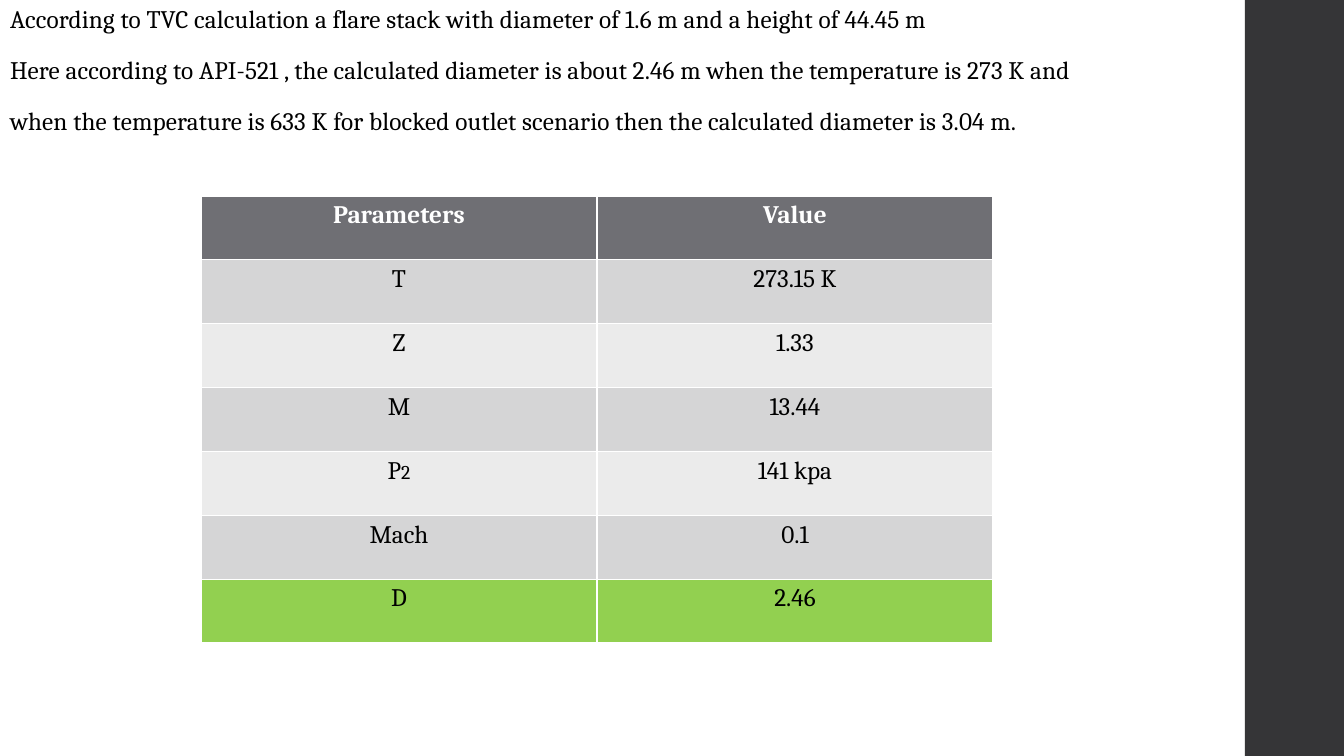
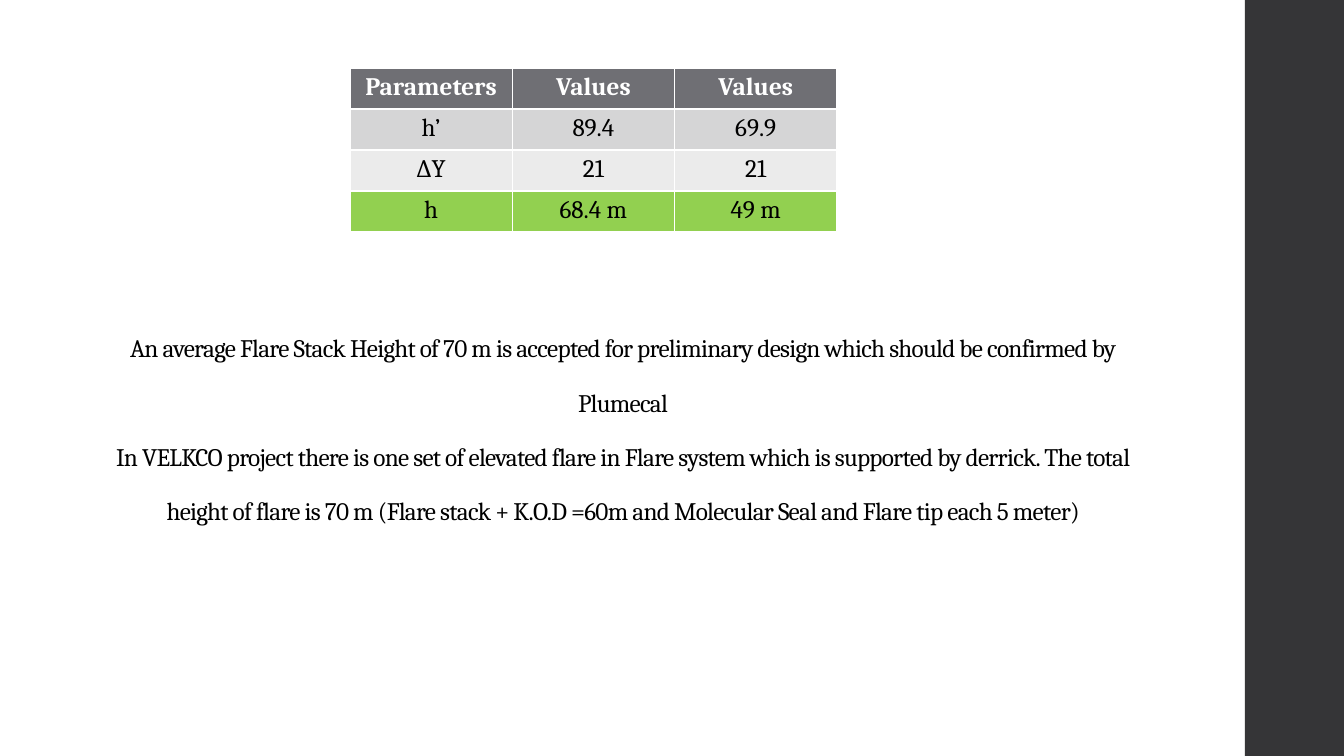
from dataclasses import dataclass

from lxml import etree
from pptx import Presentation
from pptx.dml.color import RGBColor
from pptx.enum.shapes import MSO_SHAPE
from pptx.enum.text import MSO_ANCHOR, MSO_AUTO_SIZE, PP_ALIGN
from pptx.oxml.ns import qn
from pptx.util import Emu, Pt

RECT = MSO_SHAPE.RECTANGLE
TOP, BOTTOM = MSO_ANCHOR.TOP, MSO_ANCHOR.BOTTOM
NO_AUTOFIT = MSO_AUTO_SIZE.NONE
LEFT, CENTER = PP_ALIGN.LEFT, PP_ALIGN.CENTER

EMU_PER_PX = 12192000 / 1344
SLIDE_W, SLIDE_H = 1344, 756
TITLE_AND_CONTENT, TITLE_ONLY = 1, 5


@dataclass(frozen=True)
class Theme:
    font: str = "Cambria"
    size: int = 18
    small: int = 14
    text: str = "000000"
    white: str = "FFFFFF"
    band: str = "353537"
    header: str = "6F6F74"
    odd_row: str = "D5D5D6"
    even_row: str = "EBEBEB"
    result: str = "92D050"


THEME = Theme()


@dataclass(frozen=True)
class Box:
    x: int
    y: int
    w: int
    h: int


@dataclass(frozen=True)
class Run:
    text: str
    size: int = THEME.size


Cell = str | tuple[Run, ...]


@dataclass(frozen=True)
class TableSpec:
    """Header row first, highlighted result row last."""
    box: Box
    rows: tuple[tuple[Cell, ...], ...]


BAND = Box(1245, 0, 99, SLIDE_H)
BODY = Box(0, 0, 1244, SLIDE_H)
TITLE = Box(0, 283, 1246, 248)

DIAMETER_NOTES = (
    "According to TVC calculation a flare stack with diameter of 1.6 m and a height of 44.45 m",
    "Here according to API-521 , the calculated diameter is about 2.46 m when the temperature is 273 K and",
    "when the temperature is 633 K for blocked outlet scenario then the calculated diameter is 3.04 m.",
)
DIAMETER_TABLE = TableSpec(Box(201, 196, 792, 447), (
    ("Parameters", "Value"),
    ("T", "273.15 K"),
    ("Z", "1.33"),
    ("M", "13.44"),
    ((Run("P"), Run("2", THEME.small)), "141 kpa"),
    ("Mach", "0.1"),
    ("D", "2.46"),
))
HEIGHT_NOTES = (
    ("An average Flare Stack Height of 70 m is accepted for preliminary design which should be confirmed by",
     "Plumecal"),
    ("In VELKCO project there is one set of elevated flare in Flare system which is supported by derrick. The total",
     "height of flare is 70 m (Flare stack + K.O.D =60m and Molecular Seal and Flare tip each 5 meter)"),
)
HEIGHT_TABLE = TableSpec(Box(350, 68, 487, 164), (
    ("Parameters", "Values", "Values"),
    ("h’", "89.4", "69.9"),
    ("∆Y", "21", "21"),
    ("h", "68.4 m", "49 m"),
))


def px(n: int) -> Emu:
    return Emu(round(n * EMU_PER_PX))


def emu_box(box: Box) -> tuple[Emu, Emu, Emu, Emu]:
    return px(box.x), px(box.y), px(box.w), px(box.h)


def rgb(color: str) -> RGBColor:
    return RGBColor.from_string(color)


def add_run(p, run: Run, color: str = THEME.text, bold: bool = False, spacing: int = 0) -> None:
    """Spacing is letter spacing in hundredths of a point."""
    r = p.add_run()
    r.text = run.text
    r.font.name = THEME.font
    r.font.size = Pt(run.size)
    r.font.bold = bold
    r.font.color.rgb = rgb(color)
    if spacing:
        r.font._element.set("spc", str(spacing))


def place(sp, box: Box, anchor):
    """Move a placeholder and return its text frame."""
    sp.left, sp.top, sp.width, sp.height = emu_box(box)
    tf = sp.text_frame
    tf.word_wrap = True
    tf.auto_size = NO_AUTOFIT
    tf.vertical_anchor = anchor
    return tf


def next_paragraph(tf, index: int):
    return tf.add_paragraph() if index else tf.paragraphs[0]


def fill_body(sp, lines: tuple[str, ...]) -> None:
    tf = place(sp, BODY, TOP)
    for i, line in enumerate(lines):
        p = next_paragraph(tf, i)
        p_pr = p._p.get_or_add_pPr()
        p_pr.set("marL", "0")
        p_pr.set("indent", "0")
        etree.SubElement(p_pr, qn("a:buNone"))
        p.alignment = LEFT
        p.line_spacing = 0.95
        p.space_before = Pt(14 if i else 0)
        p.space_after = Pt(2)
        add_run(p, Run(line), spacing=10)


def fill_title(sp, paragraphs: tuple[tuple[str, ...], ...]) -> None:
    tf = place(sp, TITLE, BOTTOM)
    for i, lines in enumerate(paragraphs):
        p = next_paragraph(tf, i)
        p.alignment = CENTER
        p.line_spacing = 1.8
        p.space_before = Pt(0)
        for j, line in enumerate(lines):
            if j:
                p.add_line_break()
            add_run(p, Run(line), spacing=-50)


def row_fill(index: int, last: int) -> str:
    if index == 0:
        return THEME.header
    if index == last:
        return THEME.result
    return THEME.odd_row if index % 2 else THEME.even_row


def add_table(s, spec: TableSpec) -> None:
    """The default table style supplies the white rules between cells."""
    n_rows, n_cols = len(spec.rows), len(spec.rows[0])
    table = s.shapes.add_table(n_rows, n_cols, *emu_box(spec.box)).table
    for i, values in enumerate(spec.rows):
        is_header = i == 0
        for j, value in enumerate(values):
            cell = table.cell(i, j)
            cell.fill.solid()
            cell.fill.fore_color.rgb = rgb(row_fill(i, n_rows - 1))
            p = cell.text_frame.paragraphs[0]
            p.alignment = CENTER
            for run in (Run(value),) if isinstance(value, str) else value:
                add_run(p, run, THEME.white if is_header else THEME.text, is_header)


def add_slide(prs, layout: int):
    """Add a slide with the side band that all slides share."""
    s = prs.slides.add_slide(prs.slide_layouts[layout])
    sp = s.shapes.add_shape(RECT, *emu_box(BAND))
    sp.shadow.inherit = False
    sp.fill.solid()
    sp.fill.fore_color.rgb = rgb(THEME.band)
    sp.line.fill.background()
    return s


def diameter_slide(prs) -> None:
    s = add_slide(prs, TITLE_AND_CONTENT)
    title = s.shapes.title._element
    title.getparent().remove(title)
    fill_body(s.placeholders[1], DIAMETER_NOTES)
    add_table(s, DIAMETER_TABLE)


def height_slide(prs) -> None:
    s = add_slide(prs, TITLE_ONLY)
    fill_title(s.shapes.title, HEIGHT_NOTES)
    add_table(s, HEIGHT_TABLE)


def main() -> None:
    prs = Presentation()
    prs.slide_width, prs.slide_height = px(SLIDE_W), px(SLIDE_H)
    diameter_slide(prs)
    height_slide(prs)
    prs.save("out.pptx")


if __name__ == "__main__":
    main()
